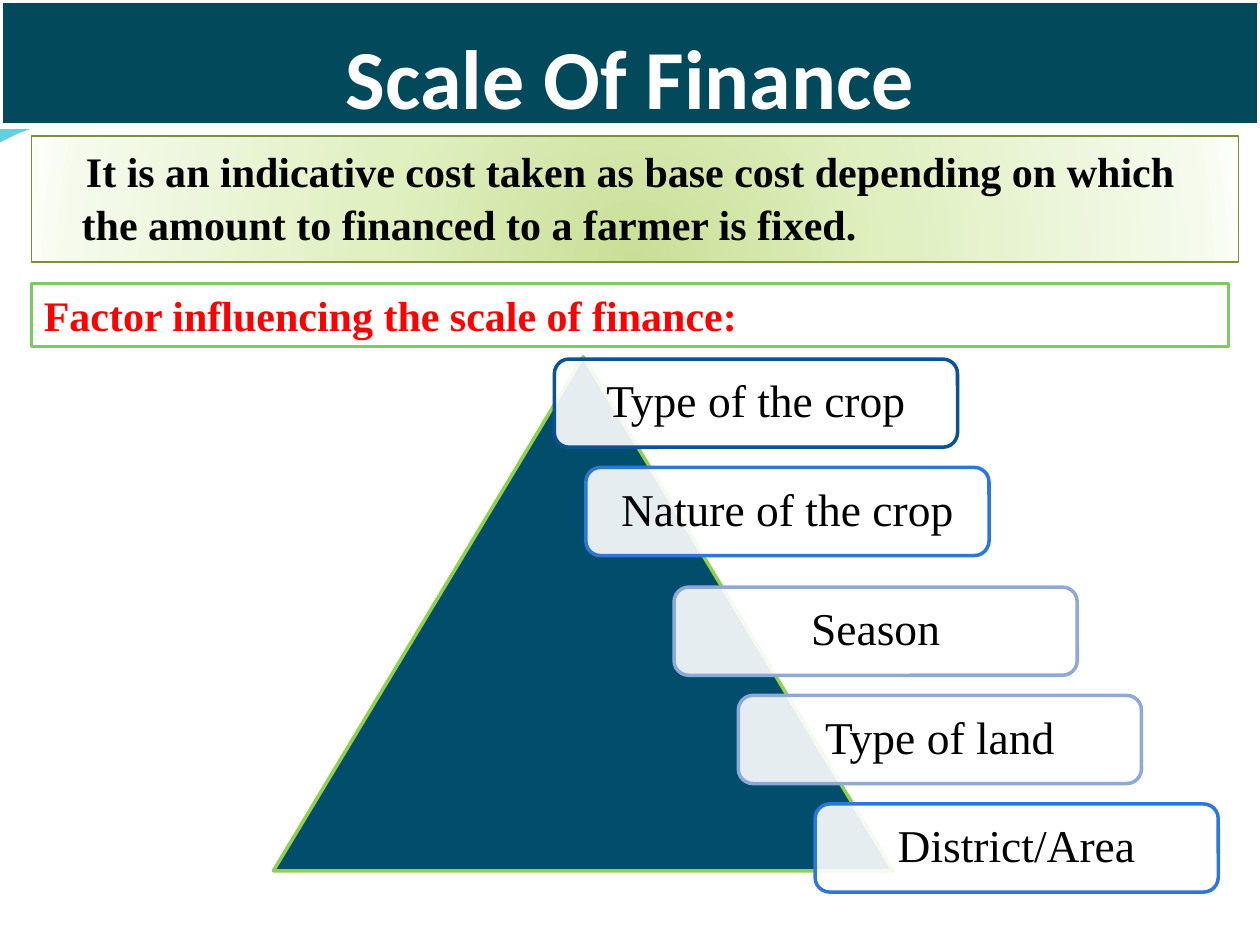
from pptx import Presentation
from pptx.dml.color import RGBColor
from pptx.enum.shapes import MSO_SHAPE
from pptx.enum.text import MSO_ANCHOR, PP_ALIGN
from pptx.oxml import parse_xml
from pptx.oxml.ns import nsdecls, qn
from pptx.util import Pt

RECT, ROUND, TRIANGLE = MSO_SHAPE.RECTANGLE, MSO_SHAPE.ROUNDED_RECTANGLE, MSO_SHAPE.ISOSCELES_TRIANGLE
TOP, MIDDLE, BOTTOM = MSO_ANCHOR.TOP, MSO_ANCHOR.MIDDLE, MSO_ANCHOR.BOTTOM
LEFT, CENTER = PP_ALIGN.LEFT, PP_ALIGN.CENTER
WHITE = RGBColor(0xFF, 0xFF, 0xFF)
BLACK = RGBColor(0, 0, 0)
RED = RGBColor(0xFF, 0, 0)
TEAL = RGBColor(0x03, 0x49, 0x5C)
DEEP_BLUE = RGBColor(0x00, 0x4E, 0x6C)
LIME = RGBColor(0x92, 0xD0, 0x50)
GREEN = RGBColor(0x7C, 0xCA, 0x62)
OLIVE = RGBColor(0x7B, 0x91, 0x35)
AQUA = RGBColor(0x62, 0xD0, 0xE0)
NAVY = RGBColor(0x0B, 0x52, 0x92)
BLUE = RGBColor(0x2C, 0x77, 0xD7)
PALE_BLUE = RGBColor(0x8E, 0xA9, 0xD9)
SERIF = "Times New Roman"
GLOW = ((0, "C9DF97"), (43, "E0F0C1"), (93, "F5FAEC"), (100, "FCFEF8"))
FACTORS = (
    ("Type of the crop", 316.8, 205.2, NAVY),
    ("Nature of the crop", 334.8, 267.1, BLUE),
    ("Season", 385.2, 335.5, PALE_BLUE),
    ("Type of land", 421.9, 397.4, PALE_BLUE),
    ("District/Area", 465.8, 459.4, BLUE),
)


def add_box(slide, kind, box, fill, line, width):
    """Add a filled and outlined preset shape without a shadow."""
    s = slide.shapes.add_shape(kind, *map(Pt, box))
    s.shadow.inherit = False
    s.fill.solid()
    s.fill.fore_color.rgb = fill
    s.line.color.rgb = line
    s.line.width = Pt(width)
    return s


def set_text(s, text, size, color, font=SERIF, bold=False, align=LEFT, anchor=TOP, insets=(7.2, 3.6)):
    """Write one paragraph into a shape and return it."""
    tf = s.text_frame
    tf.word_wrap = True
    tf.vertical_anchor = anchor
    tf.margin_left = tf.margin_right = Pt(insets[0])
    tf.margin_top = tf.margin_bottom = Pt(insets[1])
    p = tf.paragraphs[0]
    p.text = text
    p.alignment = align
    p.font.name = font
    p.font.size = Pt(size)
    p.font.bold = bold
    p.font.color.rgb = color
    return p


def set_glow(s, stops):
    """Replace the solid fill with a radial gradient."""
    gs = "".join(f'<a:gs pos="{pos * 1000}"><a:srgbClr val="{c}"/></a:gs>' for pos, c in stops)
    grad = parse_xml(
        f'<a:gradFill {nsdecls("a")} rotWithShape="1"><a:gsLst>{gs}</a:gsLst><a:path path="circle">'
        '<a:fillToRect l="50000" t="130000" r="50000" b="-30000"/></a:path></a:gradFill>'
    )
    sp_pr = s._element.spPr
    sp_pr.replace(sp_pr.find(qn("a:solidFill")), grad)


def set_alpha(s, percent):
    """Make a solid fill partly transparent."""
    color = s._element.spPr.find(qn("a:solidFill"))[0]
    color.append(parse_xml(f'<a:alpha {nsdecls("a")} val="{percent * 1000}"/>'))


def add_wave_tip(slide):
    """Add the tip of the wave that shows under the title bar."""
    builder = slide.shapes.build_freeform(0, Pt(72))
    builder.add_line_segments([(Pt(x), Pt(y)) for x, y in ((22, 72), (10, 76.5), (0, 81.4))])
    s = builder.convert_to_shape()
    s.shadow.inherit = False
    s.fill.solid()
    s.fill.fore_color.rgb = AQUA
    s.line.fill.background()


def add_definition(slide):
    """Add the definition on its glowing panel."""
    s = add_box(slide, RECT, (18, 77.8, 689.8, 72), WHITE, OLIVE, 0.75)
    set_glow(s, GLOW)
    p = set_text(s, "It is an indicative cost taken as base cost depending on which "
                 "the amount to financed to a farmer is fixed.", 24, BLACK, bold=True)
    p.line_spacing = 1.06
    p.space_before = Pt(2)
    p_pr = p._p.get_or_add_pPr()
    p_pr.set("marL", str(Pt(21.6)))
    p_pr.set("indent", str(Pt(2.4)))


def add_factor(slide, text, left, top, line):
    """Add one translucent factor label."""
    s = add_box(slide, ROUND, (left, top, 230.4, 50.4), WHITE, line, 2)
    set_alpha(s, 90)
    p = set_text(s, text, 26, BLACK, align=CENTER, anchor=MIDDLE, insets=(7.9, 7.9))
    p.line_spacing = 0.9


def main():
    """Build the slide and save it."""
    prs = Presentation()
    prs.slide_width, prs.slide_height = Pt(720), Pt(540)
    slide = prs.slides.add_slide(prs.slide_layouts[6])
    add_wave_tip(slide)
    title = add_box(slide, RECT, (0, 0, 720, 72), TEAL, WHITE, 3)
    set_text(title, "Scale Of Finance", 48, WHITE, "Calibri", True, CENTER, BOTTOM, (0, 0))
    add_definition(slide)
    add_box(slide, TRIANGLE, (156.2, 203.8, 354.2, 293.8), DEEP_BLUE, LIME, 2)
    for factor in FACTORS:
        add_factor(slide, *factor)
    heading = add_box(slide, RECT, (18, 162, 684, 36), WHITE, GREEN, 2)
    p = set_text(heading, "Factor influencing the scale of finance:", 24, RED, bold=True)
    p.space_before = Pt(2)
    prs.save("out.pptx")


if __name__ == "__main__":
    main()
